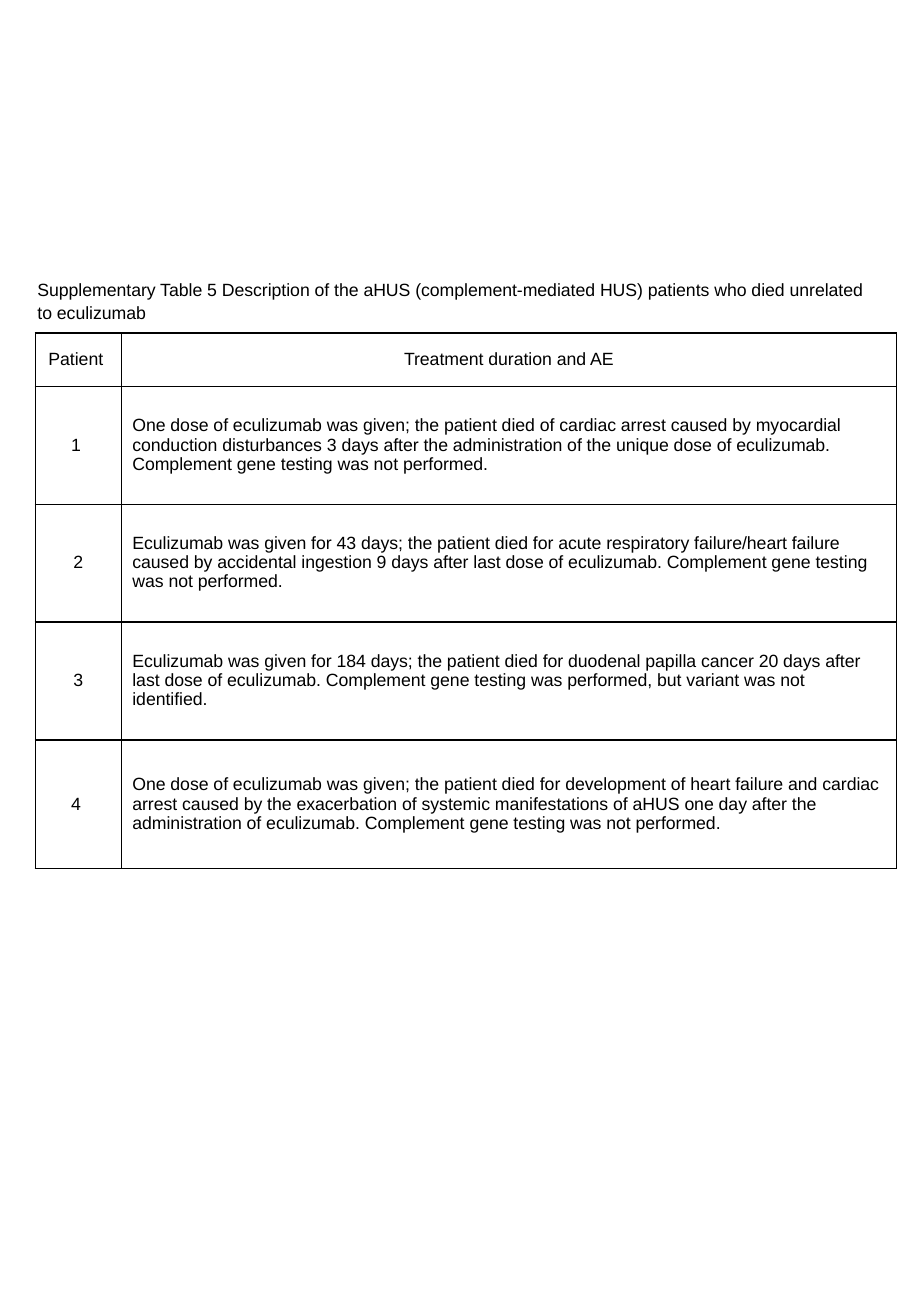
from pptx import Presentation
from pptx.dml.color import RGBColor
from pptx.enum.text import MSO_ANCHOR, PP_ALIGN
from pptx.oxml import parse_xml
from pptx.oxml.ns import nsdecls
from pptx.util import Inches, Pt

CAPTION = ("Supplementary Table 5 Description of the aHUS (complement-mediated HUS) "
           "patients who died unrelated to eculizumab")
PATIENTS = [
    ("Patient ", "Treatment duration and AE"),
    ("1 ", "One dose of eculizumab was given; the patient died of cardiac arrest caused by "
           "myocardial conduction disturbances 3 days after the administration of the unique "
           "dose of eculizumab. Complement gene testing was not performed."),
    ("2", "Eculizumab was given for 43 days; the patient died for acute respiratory "
          "failure/heart failure caused by accidental ingestion 9 days after last dose of "
          "eculizumab. Complement gene testing was not performed."),
    ("3", "Eculizumab was given for 184 days; the patient died for duodenal papilla cancer "
          "20 days after last dose of eculizumab. Complement gene testing was performed, "
          "but variant was not identified."),
    ("4 ", "One dose of eculizumab was given; the patient died for development of heart "
           "failure and cardiac arrest caused by the exacerbation of systemic manifestations "
           "of aHUS one day after the administration of eculizumab. Complement gene testing "
           "was not performed."),
]
COLUMN_WIDTHS = [0.71, 6.38]
ROW_HEIGHTS = [0.44, 0.97, 0.97, 0.97, 1.06]
BLACK = "000000"
FONT = {"name": "Arial", "size": Pt(10.5), "bold": False}
CELL = {"margin_left": Inches(0.09), "margin_right": Inches(0.09),
        "margin_top": Inches(0.04), "margin_bottom": Inches(0.04),
        "vertical_anchor": MSO_ANCHOR.MIDDLE}


def apply(target, values):
    for key, value in values.items():
        setattr(target, key, value)


def color(item, hex_code):
    item.rgb = RGBColor.from_string(hex_code)


def write(frame, text, align, line_spacing):
    paragraph = frame.paragraphs[0]
    apply(paragraph, {"alignment": align, "line_spacing": line_spacing})
    run = paragraph.add_run()
    run.text = text
    apply(run.font, FONT)
    color(run.font.color, BLACK)


def add_borders(cell):
    properties = cell._tc.get_or_add_tcPr()
    for position, side in enumerate(("lnL", "lnR", "lnT", "lnB")):
        properties.insert(position, parse_xml(
            f'<a:{side} {nsdecls("a")} w="{Pt(1)}"><a:solidFill>'
            f'<a:srgbClr val="{BLACK}"/></a:solidFill></a:{side}>'))


deck = Presentation()
deck.slide_width, deck.slide_height = Inches(7.5), Inches(10.83)
slide = deck.slides.add_slide(deck.slide_layouts[6])

table = slide.shapes.add_table(
    len(ROW_HEIGHTS), len(COLUMN_WIDTHS), Inches(0.29), Inches(2.74),
    Inches(sum(COLUMN_WIDTHS)), Inches(sum(ROW_HEIGHTS))).table
apply(table, {"first_row": False, "horz_banding": False})
for column, width in zip(table.columns, COLUMN_WIDTHS):
    column.width = Inches(width)
for row, height in zip(table.rows, ROW_HEIGHTS):
    row.height = Inches(height)

for r, patient in enumerate(PATIENTS):
    for c, text in enumerate(patient):
        cell = table.cell(r, c)
        apply(cell, CELL)
        cell.fill.background()
        add_borders(cell)
        align = PP_ALIGN.CENTER if r == 0 or c == 0 else PP_ALIGN.LEFT
        write(cell.text_frame, text, align, 0.97)

caption = slide.shapes.add_textbox(Inches(0.21), Inches(2.23), Inches(7.08), Inches(0.45))
caption.text_frame.word_wrap = True
write(caption.text_frame, CAPTION, PP_ALIGN.LEFT, 1.08)

deck.save("out.pptx")
